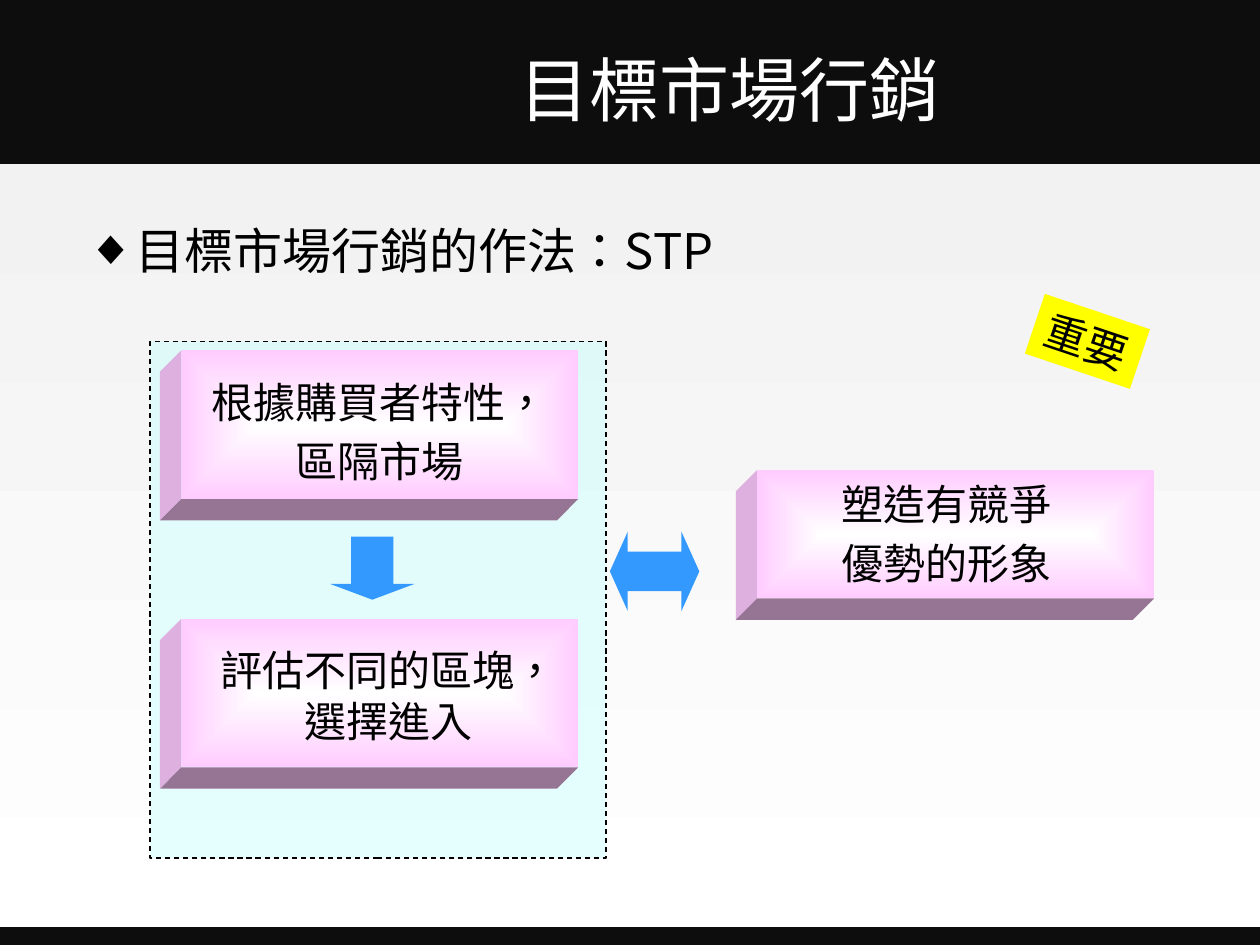
from dataclasses import dataclass

from lxml.etree import SubElement
from pptx import Presentation
from pptx.dml.color import RGBColor as RGB
from pptx.enum.dml import MSO_LINE as Dash
from pptx.enum.shapes import MSO_SHAPE as Kind
from pptx.enum.text import MSO_ANCHOR as Anchor, MSO_AUTO_SIZE as Fit, PP_ALIGN as Align
from pptx.oxml.ns import qn
from pptx.util import Inches, Pt


@dataclass(frozen=True)
class Theme:
    dark: str = "0D0D0D"
    top: str = "F2F2F2"
    white: str = "FFFFFF"
    ink: str = "000000"
    aqua: str = "CCFFFF"
    blue: str = "3399FF"
    pink: str = "FFCCFF"
    side: str = "DDB0DF"
    base: str = "967594"
    mark: str = "FFFF00"
    sans: str = "Noto Sans CJK SC"
    serif: str = "Times New Roman"
    tag: str = "Arial"
    title: int = 40
    body: int = 28
    label: int = 24


T = Theme()
COLS, ROWS = 10, 7.5  # one grid cell is one inch
DEPTH = 0.17  # thickness of a raised card


def rgb(code):
    return RGB.from_string(code)


def place(shape, box):
    shape.left, shape.top, shape.width, shape.height = map(Inches, box)


def plain(shape, color=None):
    shape.shadow.inherit = False
    shape.line.fill.background()
    if color:
        shape.fill.solid()
        shape.fill.fore_color.rgb = rgb(color)
    return shape


def block(slide, box, color=None, kind=Kind.RECTANGLE):
    return plain(slide.shapes.add_shape(kind, *map(Inches, box)), color)


def blend(shape, first, last, center=False):
    fill = shape.fill
    fill.gradient()
    for stop, color in zip(fill.gradient_stops, (first, last)):
        stop.color.rgb = rgb(color)
    fill.gradient_stops[0].position = 0
    fill.gradient_stops[1].position = 1
    fill.gradient_angle = 270
    if center:
        grad = shape.element.spPr.find(qn("a:gradFill"))
        grad.remove(grad.find(qn("a:lin")))
        ring = SubElement(grad, qn("a:path"), path="shape")
        SubElement(ring, qn("a:fillToRect"), dict.fromkeys("ltrb", "50000"))


def write(frame, lines, size, face, color=T.ink, align=Align.CENTER, gap=0):
    for i, line in enumerate(lines):
        para = frame.paragraphs[0] if i == 0 else frame.add_paragraph()
        para.alignment = align
        para.space_before = Pt(gap if i else 0)
        run = para.add_run()
        run.text = line
        font = run.font
        font.size, font.name, font.color.rgb = Pt(size), face, rgb(color)
        props = run._r.get_or_add_rPr()
        props.set("lang", "zh-TW")
        SubElement(props, qn("a:ea"), typeface=T.sans)


def backdrop(slide, box):
    slide.background.fill.solid()
    slide.background.fill.fore_color.rgb = rgb(T.dark)
    panel = block(slide, box)
    blend(panel, T.top, T.white)
    panel.element.getparent().insert(2, panel.element)  # behind the text


def heading(slide, box, text):
    title = slide.shapes.title
    place(title, box)
    frame = title.text_frame
    frame.auto_size, frame.vertical_anchor = Fit.NONE, Anchor.MIDDLE
    write(frame, [text], T.title, T.sans, T.white)


def bullet(slide, box, text):
    body = slide.placeholders[1]
    place(body, box)
    frame = body.text_frame
    frame.auto_size = Fit.NONE
    props = frame.paragraphs[0]._p.get_or_add_pPr()
    props.set("marL", str(Inches(0.38)))
    props.set("indent", str(-Inches(0.38)))
    SubElement(props, qn("a:buChar"), char="◆")
    write(frame, [text], T.body, T.sans, align=Align.LEFT)


def card(slide, box, lines, text, gap=0, wrap=False):
    """Raised card; text is the label's box relative to the card."""
    x, y, w, h = box
    left, low = x - DEPTH, y + h
    faces = (
        (T.side, [(x, y), (left, y + DEPTH), (left, low + DEPTH), (x, low)]),
        (T.base, [(x, low), (left, low + DEPTH), (x + w - DEPTH, low + DEPTH), (x + w, low)]),
    )
    for color, points in faces:
        first, *rest = [(Inches(a), Inches(b)) for a, b in points]
        form = slide.shapes.build_freeform(*first)
        form.add_line_segments(rest, close=True)
        plain(form.convert_to_shape(), color)
    blend(block(slide, box), T.white, T.pink, center=True)
    dx, dy, tw, th = text
    frame = slide.shapes.add_textbox(*map(Inches, (x + dx, y + dy, tw, th))).text_frame
    frame.word_wrap = wrap
    write(frame, lines, T.label, T.serif, gap=gap)


def steps(slide, box):
    """Dashed frame with two cards and the arrow between them."""
    x, y, w, h = box
    frame = block(slide, box, T.aqua)
    tint = frame.element.spPr.find(qn("a:solidFill"))[0]
    SubElement(tint, qn("a:alpha"), val="51000")
    frame.line.color.rgb = rgb(T.ink)
    frame.line.width, frame.line.dash_style = Pt(0.75), Dash.DASH
    size = (3.15, 1.18)
    card(slide, (x + 0.25, y + 0.07, *size), ["根據購買者特性，", "區隔市場"],
         (0, 0.16, 3.15, 0.98), gap=4.8, wrap=True)
    card(slide, (x + 0.25, y + 2.2, *size), ["評估不同的區塊，", "選擇進入"],
         (0.21, 0.16, 2.87, 0.9))
    arrow = block(slide, (x + 1.43, y + 1.55, 0.67, 0.5), T.blue, Kind.DOWN_ARROW)
    arrow.adjustments[1] = 0.25


def image(slide, box):
    """Two-way arrow leading to the positioning card."""
    x, y, w, h = box
    arrow = block(slide, (x, y + 0.49, 0.71, 0.63), T.blue, Kind.LEFT_RIGHT_ARROW)
    arrow.adjustments[1] = 0.225
    card(slide, (x + w - 3.15, y, 3.15, h), ["塑造有競爭", "優勢的形象"],
         (0.57, 0.02, 1.87, 0.98), gap=4.8)


def sticker(slide, box, text):
    note = block(slide, box, T.mark)
    note.rotation = 18.6
    note.text_frame.word_wrap = False
    write(note.text_frame, [text], T.label, T.tag, align=Align.LEFT)


def main():
    deck = Presentation()
    deck.slide_width, deck.slide_height = Inches(COLS), Inches(ROWS)
    slide = deck.slides.add_slide(deck.slide_layouts[1])
    backdrop(slide, (0, 1.3, COLS, 6.06))
    heading(slide, (1.83, 0.12, 7.92, 1.16), "目標市場行銷")
    bullet(slide, (0.59, 1.7, 8.82, 0.79), "目標市場行銷的作法：STP")
    steps(slide, (1.19, 2.71, 3.62, 4.1))
    image(slide, (4.84, 3.73, 4.32, 1.02))
    sticker(slide, (8.19, 2.46, 0.88, 0.5), "重要")
    deck.save("out.pptx")


if __name__ == "__main__":
    main()
